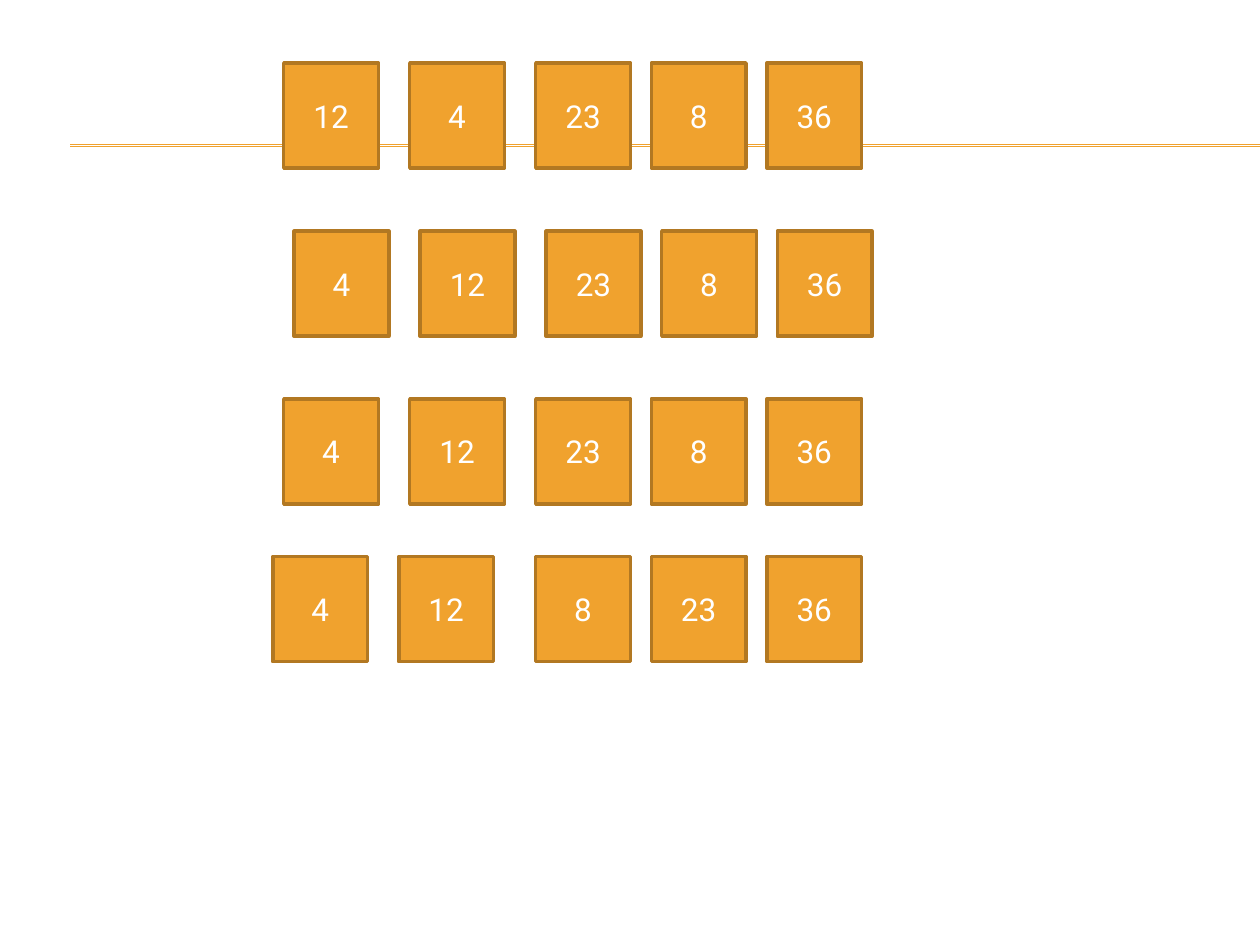
from lxml.etree import SubElement
from pptx import Presentation
from pptx.dml.color import RGBColor
from pptx.enum.shapes import MSO_CONNECTOR, MSO_SHAPE
from pptx.enum.text import MSO_ANCHOR, PP_ALIGN
from pptx.oxml.ns import qn
from pptx.util import Cm, Pt

COLORS = {"box": "F0A22E", "edge": "B27822", "text": "FFFFFF"}
RULES = [2.92, 2.95]
RULE_LEFT, RULE_RIGHT = 1.42, 25.4
BOX_W, BOX_H = 1.91, 2.12
PAIR_PITCH, TRIO_PITCH = 2.54, 2.33
PASSES = [
    {"top": 1.27, "pair": 5.72, "trio": 10.8, "values": [12, 4, 23, 8, 36]},
    {"top": 4.66, "pair": 5.93, "trio": 11.01, "values": [4, 12, 23, 8, 36]},
    {"top": 8.04, "pair": 5.72, "trio": 10.8, "values": [4, 12, 23, 8, 36]},
    {"top": 11.22, "pair": 5.5, "trio": 10.8, "values": [4, 12, 8, 23, 36]},
]
FONT = {"name": "Roboto", "size": Pt(18)}
FRAME = {"vertical_anchor": MSO_ANCHOR.MIDDLE, "word_wrap": True}


def rgb(key):
    return RGBColor.from_string(COLORS[key])


def apply(obj, formats):
    for name, value in formats.items():
        setattr(obj, name, value)


def add_rule(s, y):
    sp = s.shapes.add_connector(
        MSO_CONNECTOR.STRAIGHT, Cm(RULE_LEFT), Cm(y), Cm(RULE_RIGHT), Cm(y))
    sp.line.color.rgb = rgb("box")
    sp.line.width = Pt(0.75)
    SubElement(sp._element.spPr, qn("a:effectLst"))


def add_box(s, x, y, value):
    sp = s.shapes.add_shape(
        MSO_SHAPE.RECTANGLE, Cm(x), Cm(y), Cm(BOX_W), Cm(BOX_H))
    sp.shadow.inherit = False
    sp.fill.solid()
    sp.fill.fore_color.rgb = rgb("box")
    sp.line.color.rgb = rgb("edge")
    sp.line.width = Pt(2)
    tf = sp.text_frame
    apply(tf, FRAME)
    p = tf.paragraphs[0]
    p.alignment = PP_ALIGN.CENTER
    r = p.add_run()
    r.text = str(value)
    apply(r.font, FONT)
    r.font.color.rgb = rgb("text")


def main():
    prs = Presentation()
    apply(prs, {"slide_width": Cm(25.4), "slide_height": Cm(19.05)})
    s = prs.slides.add_slide(prs.slide_layouts[6])
    for y in RULES:
        add_rule(s, y)
    for row in PASSES:
        lefts = [row["pair"] + i * PAIR_PITCH for i in range(2)]
        lefts += [row["trio"] + i * TRIO_PITCH for i in range(3)]
        for x, value in zip(lefts, row["values"]):
            add_box(s, x, row["top"], value)
    prs.save("out.pptx")


if __name__ == "__main__":
    main()
